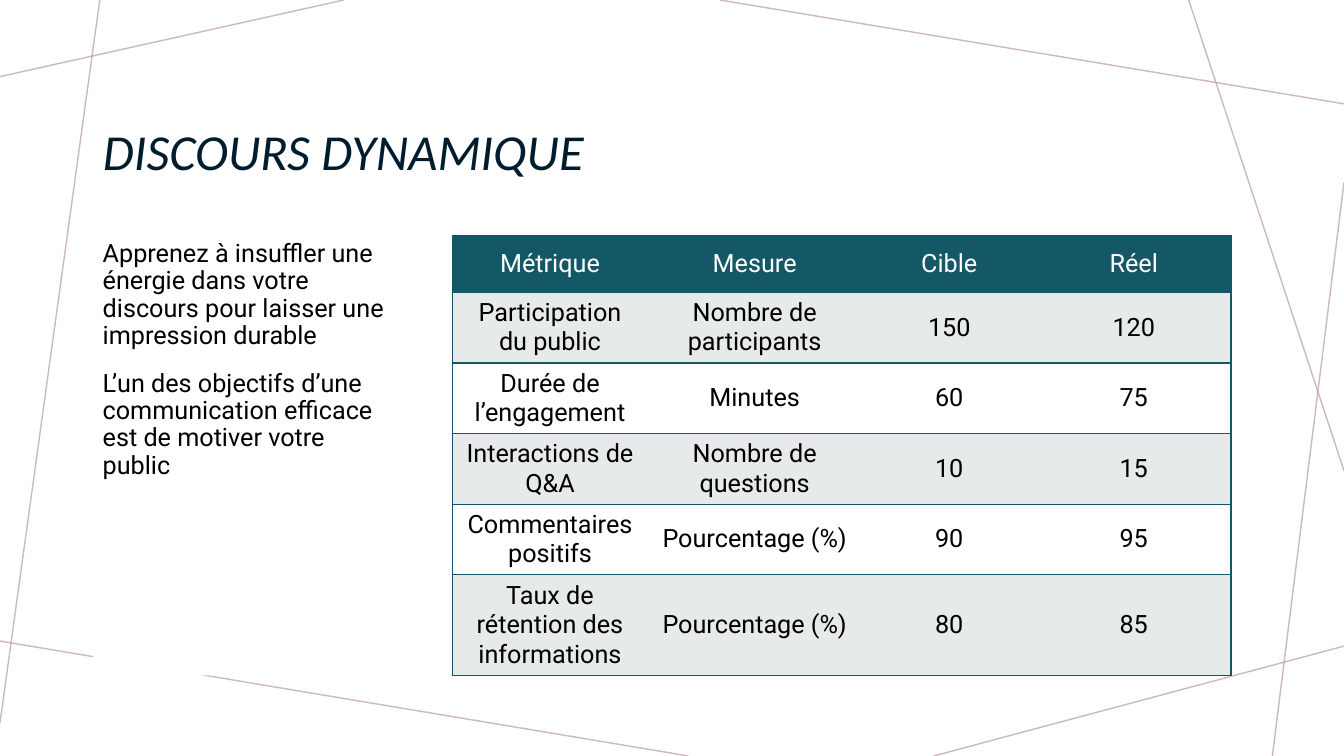
import lxml.etree
import pptx
import pptx.dml.color
import pptx.enum.shapes
import pptx.enum.text
import pptx.oxml.ns
import pptx.util

Inches = pptx.util.Inches
Pt = pptx.util.Pt
RGBColor = pptx.dml.color.RGBColor
PP_ALIGN = pptx.enum.text.PP_ALIGN
MSO_ANCHOR = pptx.enum.text.MSO_ANCHOR
qn = pptx.oxml.ns.qn

WHITE = RGBColor(0xFF, 0xFF, 0xFF)
BLACK = RGBColor(0x00, 0x00, 0x00)
NAVY = RGBColor(0x00, 0x1D, 0x2E)
TEAL = RGBColor(0x14, 0x57, 0x66)
PALE_GREY = RGBColor(0xE7, 0xEA, 0xEA)
MAUVE = RGBColor(0xB9, 0x9B, 0x9F)

TITLE_FONT = "Calibri"
BODY_FONT = "Roboto"

BACKGROUND_LINES = [
    (3.41, 0, 0, 0.76),
    (0.99, 0, 0, 7.17),
    (6.83, 7.5, 0, 6.36),
    (13.33, 6.41, 9.26, 7.5),
    (13.33, 1.81, 12.62, 7.5),
    (13.33, 4.67, 11.79, 0),
    (13.33, 1.03, 7.14, 0),
]

ADVICE = [
    "Apprenez à insuffler une énergie dans votre discours pour laisser une impression durable",
    "L’un des objectifs d’une communication efficace est de motiver votre public",
]

METRICS = [
    ("Métrique", "Mesure", "Cible", "Réel"),
    ("Participation du public", "Nombre de participants", "150", "120"),
    ("Durée de l’engagement", "Minutes", "60", "75"),
    ("Interactions de Q&A", "Nombre de questions", "10", "15"),
    ("Commentaires positifs", "Pourcentage (%)", "90", "95"),
    ("Taux de rétention des informations", "Pourcentage (%)", "80", "85"),
]
COLUMN_WIDTHS = [1.93, 2.13, 1.73, 1.93]
ROW_HEIGHTS = [0.56, 0.64, 0.64, 0.64, 0.64, 0.91]


def add_run(paragraph, text, size, font, color):
    run = paragraph.add_run()
    run.text = text
    run.font.size = Pt(size)
    run.font.name = font
    run.font.color.rgb = color
    return run


def add_background_line(slide, x1, y1, x2, y2):
    line = slide.shapes.add_connector(
        pptx.enum.shapes.MSO_CONNECTOR.STRAIGHT,
        Inches(x1), Inches(y1), Inches(x2), Inches(y2))
    line.line.color.rgb = MAUVE
    line.line.width = Pt(1)
    color = line.element.find(".//" + qn("a:srgbClr"))
    lxml.etree.SubElement(color, qn("a:alpha"), val="70000")
    lxml.etree.SubElement(line.element.spPr, qn("a:effectLst"))


def format_title(slide, text):
    title = slide.shapes.title
    title.left, title.top = Inches(0.92), Inches(0.4)
    title.width, title.height = Inches(11.3), Inches(1.45)
    title.text_frame.vertical_anchor = MSO_ANCHOR.BOTTOM
    paragraph = title.text_frame.paragraphs[0]
    paragraph.alignment = PP_ALIGN.LEFT
    paragraph.line_spacing = 0.9
    add_run(paragraph, text, 36, TITLE_FONT, NAVY).font.italic = True


def add_advice(slide, texts):
    panel = slide.shapes.add_textbox(
        Inches(0.92), Inches(2.34), Inches(3.08), Inches(4.36))
    panel.fill.solid()
    panel.fill.fore_color.rgb = WHITE
    frame = panel.text_frame
    frame.word_wrap = True
    for i, text in enumerate(texts):
        paragraph = frame.add_paragraph() if i else frame.paragraphs[0]
        paragraph.line_spacing = 0.9
        paragraph.space_before = Pt(10)
        paragraph.space_after = Pt(5)
        add_run(paragraph, text, 18, BODY_FONT, BLACK)


def set_borders(cell, visible_sides):
    """Draw the given sides (of L, R, T, B) in teal and hide the others."""
    properties = cell._tc.get_or_add_tcPr()
    for side in "LRTB":
        border = lxml.etree.SubElement(
            properties, qn("a:ln" + side), w=str(Pt(1)))
        if side in visible_sides:
            fill = lxml.etree.SubElement(border, qn("a:solidFill"))
            lxml.etree.SubElement(fill, qn("a:srgbClr"), val=str(TEAL))
        else:
            lxml.etree.SubElement(border, qn("a:noFill"))


def fill_cell(cell, text, text_color, fill_color):
    cell.fill.solid()
    cell.fill.fore_color.rgb = fill_color
    cell.vertical_anchor = MSO_ANCHOR.MIDDLE
    paragraph = cell.text_frame.paragraphs[0]
    paragraph.alignment = PP_ALIGN.CENTER
    add_run(paragraph, text, 18, BODY_FONT, text_color)


def add_metrics_table(slide):
    table = slide.shapes.add_table(
        len(METRICS), len(COLUMN_WIDTHS), Inches(4.49), Inches(2.34),
        Inches(sum(COLUMN_WIDTHS)), Inches(sum(ROW_HEIGHTS))).table
    table.first_row = False
    table.horz_banding = False
    for column, width in zip(table.columns, COLUMN_WIDTHS):
        column.width = Inches(width)
    for row, height in zip(table.rows, ROW_HEIGHTS):
        row.height = Inches(height)

    outer_sides = {0: "L", len(COLUMN_WIDTHS) - 1: "R"}
    for r, values in enumerate(METRICS):
        if r == 0:
            text_color, fill_color = WHITE, TEAL
        else:
            text_color, fill_color = BLACK, PALE_GREY if r % 2 else WHITE
        for c, value in enumerate(values):
            cell = table.cell(r, c)
            set_borders(cell, "TB" + outer_sides.get(c, ""))
            fill_cell(cell, value, text_color, fill_color)


def main():
    presentation = pptx.Presentation()
    presentation.slide_width = Inches(13.33)
    presentation.slide_height = Inches(7.5)
    slide = presentation.slides.add_slide(presentation.slide_layouts[5])
    for ends in BACKGROUND_LINES:
        add_background_line(slide, *ends)
    format_title(slide, "DISCOURS DYNAMIQUE")
    add_advice(slide, ADVICE)
    add_metrics_table(slide)
    presentation.save("out.pptx")


if __name__ == "__main__":
    main()
